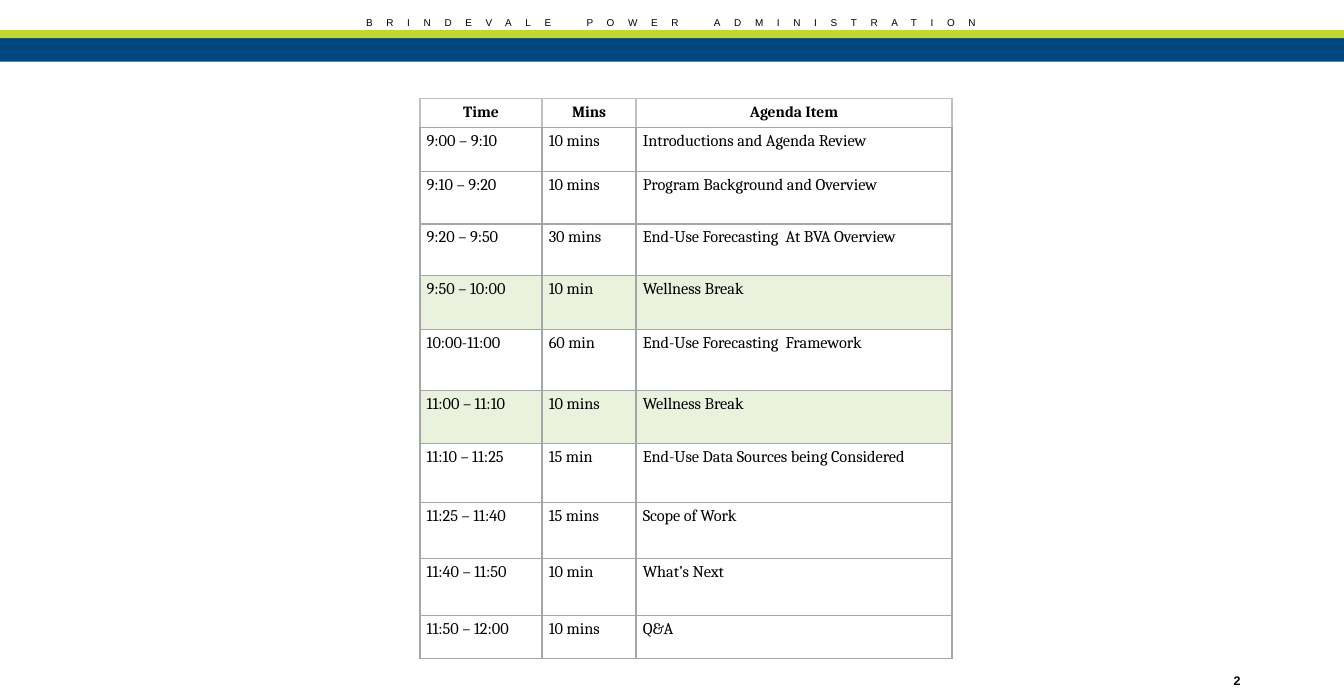
from lxml.etree import SubElement
from pptx import Presentation
from pptx.dml.color import RGBColor
from pptx.enum.shapes import MSO_SHAPE as SHAPE
from pptx.enum.text import MSO_ANCHOR as ANCHOR, PP_ALIGN as ALIGN
from pptx.oxml.ns import qn
from pptx.util import Inches, Pt

NAVY = RGBColor(0x00, 0x46, 0x7F)
LIME = RGBColor(0xC1, 0xD8, 0x2F)
BLACK = RGBColor(0x00, 0x00, 0x00)
WHITE = RGBColor(0xFF, 0xFF, 0xFF)
BREAK_GREEN = RGBColor(0xEA, 0xF1, 0xDD)
GRAY = RGBColor(0xA6, 0xA6, 0xA6)
LIGHT_GRAY = RGBColor(0xBF, 0xBF, 0xBF)

COLS = [1.09, 0.84, 2.82]
ROWS = [0.26, 0.39, 0.47, 0.46, 0.48, 0.55, 0.47, 0.53, 0.5, 0.51, 0.38]
AGENDA = [
    ("Time", "Mins", "Agenda Item"),
    ("9:00 – 9:10", "10 mins", "Introductions and Agenda Review"),
    ("9:10 – 9:20", "10 mins", "Program Background and Overview"),
    ("9:20 – 9:50", "30 mins", "End-Use Forecasting  At BVA Overview"),
    ("9:50 – 10:00", "10 min", "Wellness Break"),
    ("10:00-11:00", "60 min", "End-Use Forecasting  Framework"),
    ("11:00 – 11:10", "10 mins", "Wellness Break"),
    ("11:10 – 11:25", "15 min", "End-Use Data Sources being Considered"),
    ("11:25 – 11:40", "15 mins", "Scope of Work"),
    ("11:40 – 11:50", "10 min", "What’s Next"),
    ("11:50 – 12:00", "10 mins", "Q&A"),
]

BANNER_FONT = {"name": "Arial", "size": Pt(6.4), "bold": False}
NUMBER_FONT = {"name": "Arial", "size": Pt(8), "bold": True}
HEAD_FONT = {"name": "Cambria", "size": Pt(10), "bold": True}
BODY_FONT = {"name": "Cambria", "size": Pt(10.5), "bold": False}
CELL_FORMAT = {
    "margin_left": Inches(0.06),
    "margin_right": Inches(0.06),
    "margin_top": Inches(0.04),
    "margin_bottom": Inches(0.04),
    "vertical_anchor": ANCHOR.TOP,
}
FRAME_FORMAT = {
    "margin_left": 0,
    "margin_right": 0,
    "margin_top": 0,
    "margin_bottom": 0,
    "vertical_anchor": ANCHOR.MIDDLE,
    "word_wrap": True,
}


def set_attrs(obj, values):
    """Set each named attribute on an object."""
    for name, value in values.items():
        setattr(obj, name, value)


def add_run(p, text, font, spacing=None):
    """Add a black run with optional letter spacing in points."""
    r = p.add_run()
    r.text = text
    set_attrs(r.font, font)
    r.font.color.rgb = BLACK
    if spacing:
        r.font._element.set("spc", str(round(spacing * 100)))


def add_bar(s, top, height, color):
    """Add a full-width band."""
    bar = s.shapes.add_shape(SHAPE.RECTANGLE, 0, Inches(top), Inches(12), Inches(height))
    bar.shadow.inherit = False
    bar.fill.solid()
    bar.fill.fore_color.rgb = color
    bar.line.fill.background()


def add_centered_text(s, left, top, width, height):
    """Add a text box and return its centered paragraph."""
    sp = s.shapes.add_textbox(Inches(left), Inches(top), Inches(width), Inches(height))
    set_attrs(sp.text_frame, FRAME_FORMAT)
    p = sp.text_frame.paragraphs[0]
    p.alignment = ALIGN.CENTER
    return p


def add_banner(s, text):
    """Add the letter-spaced organisation name."""
    p = add_centered_text(s, -0.01, 0.1, 12, 0.2)
    words = text.split()
    for i, word in enumerate(words):
        if i:
            add_run(p, " ", BANNER_FONT, 12.2)
        add_run(p, word, BANNER_FONT, 8.8)


def set_borders(cell, colors):
    """Draw one-point borders in the color given for each side."""
    props = cell._tc.get_or_add_tcPr()
    for i, (side, color) in enumerate(colors.items()):
        ln = SubElement(props, qn(f"a:{side}"), w=str(Pt(1)))
        fill = SubElement(ln, qn("a:solidFill"))
        SubElement(fill, qn("a:srgbClr"), val=str(color))
        props.remove(ln)
        props.insert(i, ln)


def add_agenda(s):
    """Add the agenda table with shaded breaks."""
    shape = s.shapes.add_table(len(ROWS), len(COLS), Inches(3.75), Inches(0.88),
                               Inches(sum(COLS)), Inches(sum(ROWS)))
    table = shape.table
    table.horz_banding = False
    for col, width in zip(table.columns, COLS):
        col.width = Inches(width)
    for i, (row, height, texts) in enumerate(zip(table.rows, ROWS, AGENDA)):
        row.height = Inches(height)
        head = i == 0
        edge = LIGHT_GRAY if head else GRAY
        for cell, text in zip(row.cells, texts):
            set_attrs(cell, CELL_FORMAT)
            cell.fill.solid()
            cell.fill.fore_color.rgb = BREAK_GREEN if "Break" in texts[2] else WHITE
            set_borders(cell, {"lnL": edge, "lnR": edge, "lnT": edge, "lnB": GRAY})
            p = cell.text_frame.paragraphs[0]
            p.alignment = ALIGN.CENTER if head else ALIGN.LEFT
            add_run(p, text, HEAD_FONT if head else BODY_FONT)


def main():
    """Build and save the agenda slide."""
    prs = Presentation()
    prs.slide_width, prs.slide_height = Inches(12), Inches(6.25)
    s = prs.slides.add_slide(prs.slide_layouts[6])
    add_bar(s, 0.34, 0.21, NAVY)
    add_bar(s, 0.27, 0.07, LIME)
    add_banner(s, "BRINDEVALE POWER ADMINISTRATION")
    add_run(add_centered_text(s, 10.6, 5.91, 0.89, 0.33), "2", NUMBER_FONT)
    add_agenda(s)
    prs.save("out.pptx")


if __name__ == "__main__":
    main()
